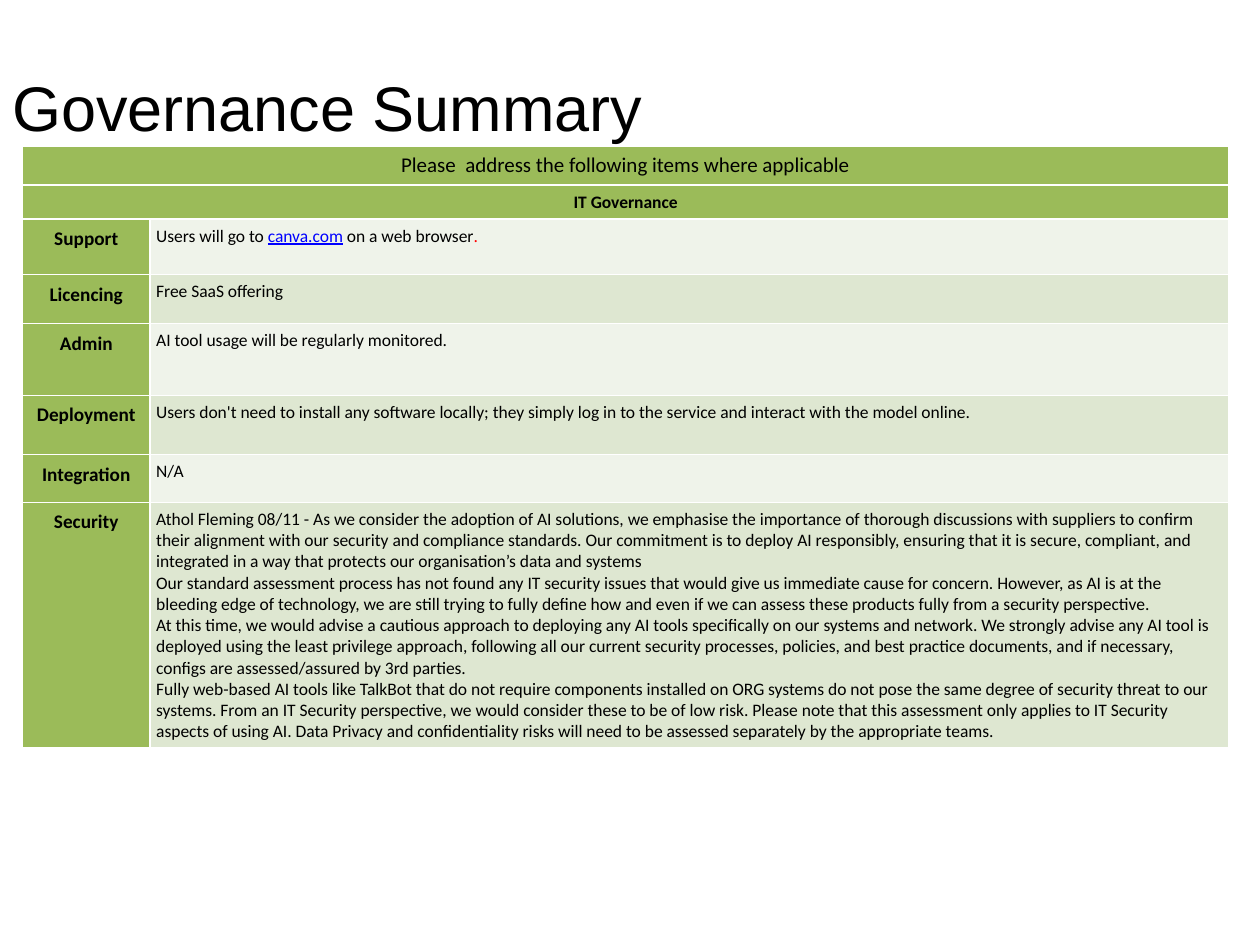
from lxml.etree import SubElement
from pptx import Presentation
from pptx.dml.color import RGBColor
from pptx.enum.text import MSO_ANCHOR, PP_ALIGN
from pptx.oxml.ns import qn
from pptx.util import Inches, Pt

BLACK = RGBColor(0x00, 0x00, 0x00)
BLUE = RGBColor(0x00, 0x00, 0xFF)
RED = RGBColor(0xFF, 0x00, 0x00)
GREEN = RGBColor(0x9B, 0xBB, 0x59)
PALE = RGBColor(0xEF, 0xF3, 0xEA)
SOFT = RGBColor(0xDE, 0xE7, 0xD1)

HEADINGS = [("Please  address the following items where applicable", 12, False),
            ("IT Governance", 10, True)]
ITEMS = [
    ("Support", [[("Users will go to ", BLACK), ("canva.com", BLUE),
                  (" on a web browser", BLACK), (".", RED)]]),
    ("Licencing", [[("Free SaaS offering", BLACK)]]),
    ("Admin", [[("AI tool usage will be regularly monitored.", BLACK)]]),
    ("Deployment", [[("Users don't need to install any software locally; they simply log in "
                      "to the service and interact with the model online.", BLACK)]]),
    ("Integration", [[("N/A", BLACK)]]),
    ("Security", [
        [("Athol Fleming 08/11 - As we consider the adoption of AI solutions, we emphasise the "
          "importance of thorough discussions with suppliers to confirm their alignment with our "
          "security and compliance standards. Our commitment is to deploy AI responsibly, ensuring "
          "that it is secure, compliant, and integrated in a way that protects our organisation’s "
          "data and systems", BLACK)],
        [("Our standard assessment process has not found any IT security issues that would give us "
          "immediate cause for concern. However, as AI is at the bleeding edge of technology, we "
          "are still trying to fully define how and even if we can assess these products fully "
          "from a security perspective.", BLACK)],
        [("At this time, we would advise a cautious approach to deploying any AI tools specifically "
          "on our systems and network. We strongly advise any AI tool is deployed using the least "
          "privilege approach, following all our current security processes, policies, and best "
          "practice documents, and if necessary, configs are assessed/assured by 3rd parties.", BLACK)],
        [("Fully web-based AI tools like TalkBot that do not require components installed on ORG "
          "systems do not pose the same degree of security threat to our systems. From an IT "
          "Security perspective, we would consider these to be of low risk. Please note that this "
          "assessment only applies to IT Security aspects of using AI. Data Privacy and "
          "confidentiality risks will need to be assessed separately by the appropriate teams.", BLACK)],
    ]),
]
COLUMN_WIDTHS = [1.01, 8.56]
ROW_HEIGHTS = [0.31, 0.27, 0.44, 0.39, 0.57, 0.47, 0.38, 1.95]


def add_span(para, text, size, bold=False, color=BLACK, font="Calibri"):
    span = para.add_run()
    span.text = text
    span.font.name = font
    span.font.size = Pt(size)
    span.font.bold = bold
    span.font.underline = color == BLUE
    span.font.color.rgb = color


def style_cell(cell, color):
    cell.margin_left = cell.margin_right = Inches(0.05)
    cell.margin_top = cell.margin_bottom = Inches(0.05)
    properties = cell._tc.get_or_add_tcPr()
    for side in ("a:lnL", "a:lnR", "a:lnT", "a:lnB"):
        line = SubElement(properties, qn(side), w=str(Pt(1)))
        fill = SubElement(line, qn("a:solidFill"))
        SubElement(fill, qn("a:srgbClr"), val="FFFFFF")
    cell.fill.solid()
    cell.fill.fore_color.rgb = color


deck = Presentation()
deck.slide_width = Inches(10)
deck.slide_height = Inches(7.5)
page = deck.slides.add_slide(deck.slide_layouts[6])

title = page.shapes.add_textbox(Inches(0), Inches(0.48), Inches(9), Inches(0.68))
title.text_frame.word_wrap = True
title.text_frame.vertical_anchor = MSO_ANCHOR.BOTTOM
title.text_frame.margin_bottom = Inches(0.02)
add_span(title.text_frame.paragraphs[0], "Governance Summary", 36, font="Arial")

table = page.shapes.add_table(
    len(ROW_HEIGHTS), len(COLUMN_WIDTHS), Inches(0.18), Inches(1.16),
    Inches(sum(COLUMN_WIDTHS)), Inches(sum(ROW_HEIGHTS))).table
table.first_row = False
table.horz_banding = False
for column, width in zip(table.columns, COLUMN_WIDTHS):
    column.width = Inches(width)
for row, height in zip(table.rows, ROW_HEIGHTS):
    row.height = Inches(height)

for index, (text, size, bold) in enumerate(HEADINGS):
    heading = table.cell(index, 0)
    heading.merge(table.cell(index, 1))
    for cell in table.rows[index].cells:
        style_cell(cell, GREEN)
    para = heading.text_frame.paragraphs[0]
    para.alignment = PP_ALIGN.CENTER
    add_span(para, text, size, bold)

for index, (name, paragraphs) in enumerate(ITEMS):
    label, answer = table.rows[index + len(HEADINGS)].cells
    style_cell(label, GREEN)
    style_cell(answer, SOFT if index % 2 else PALE)
    para = label.text_frame.paragraphs[0]
    para.alignment = PP_ALIGN.CENTER
    para.line_spacing = 1.07
    para.space_after = Pt(8)
    add_span(para, name, 11, True)
    for number, spans in enumerate(paragraphs):
        frame = answer.text_frame
        para = frame.add_paragraph() if number else frame.paragraphs[0]
        for text, color in spans:
            add_span(para, text, 10, color=color)

deck.save("out.pptx")
